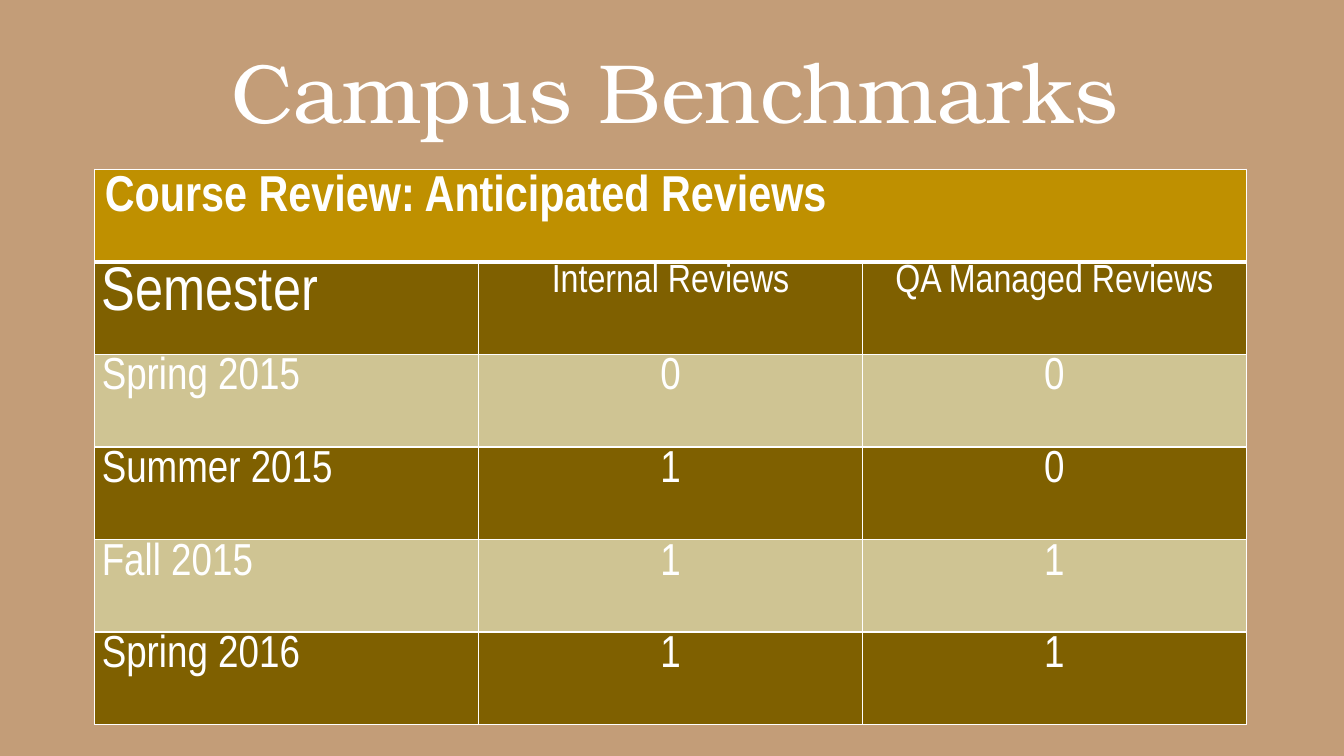
import lxml.etree
import pptx
import pptx.dml.color
import pptx.enum.text
import pptx.oxml.ns
import pptx.util

Inches = pptx.util.Inches
Pt = pptx.util.Pt
PP_ALIGN = pptx.enum.text.PP_ALIGN
MSO_ANCHOR = pptx.enum.text.MSO_ANCHOR

WHITE = "FFFFFF"
GOLD = "BF9000"
BROWN = "7F6000"
SAND = "CFC493"
TAN = "C39D78"

HEADING = "Course Review: Anticipated Reviews"
ROWS = [
    ("Semester", "Internal Reviews", "QA Managed Reviews"),
    ("Spring 2015", "0", "0"),
    ("Summer 2015", "1", "0"),
    ("Fall 2015", "1", "1"),
    ("Spring 2016", "1", "1"),
]


def color(value):
    return pptx.dml.color.RGBColor.from_string(value)


def format_text(p, font, size, bold=False, align=PP_ALIGN.LEFT, spacing=1.0):
    p.alignment = align
    p.line_spacing = spacing
    for r in p.runs:
        r.font.name = font
        r.font.size = Pt(size)
        r.font.bold = bold
        r.font.color.rgb = color(WHITE)


def set_borders(cell, top=1, bottom=1):
    tcPr = cell._tc.get_or_add_tcPr()
    qn = pptx.oxml.ns.qn
    for side, width in (("L", 1), ("R", 1), ("T", top), ("B", bottom)):
        ln = lxml.etree.SubElement(tcPr, qn("a:ln" + side), w=str(Pt(width)))
        fill = lxml.etree.SubElement(ln, qn("a:solidFill"))
        lxml.etree.SubElement(fill, qn("a:srgbClr"), val=WHITE)


def fill_cell(cell, value):
    cell.fill.solid()
    cell.fill.fore_color.rgb = color(value)


def add_title(slide, left, top, width, height):
    tf = slide.shapes.add_textbox(left, top, width, height).text_frame
    tf.word_wrap = True
    tf.vertical_anchor = MSO_ANCHOR.MIDDLE
    tf.text = "Campus Benchmarks"
    format_text(tf.paragraphs[0], "TeX Gyre Bonum", 60,
                align=PP_ALIGN.CENTER, spacing=0.9)


def add_review_table(slide, left, top, width, height):
    n_rows, n_cols = len(ROWS) + 1, len(ROWS[0])
    table = slide.shapes.add_table(n_rows, n_cols, left, top, width, height).table
    for column in table.columns:
        column.width = int(width / n_cols)
    for row in table.rows:
        row.height = int(height / n_rows)

    table.cell(0, 0).merge(table.cell(0, n_cols - 1))
    for cell in table.rows[0].cells:
        set_borders(cell, bottom=3)
        fill_cell(cell, GOLD)
    heading = table.cell(0, 0)
    heading.text = HEADING
    format_text(heading.text_frame.paragraphs[0], "Arial Narrow", 36, bold=True)

    for i, values in enumerate(ROWS, start=1):
        for j, value in enumerate(values):
            cell = table.cell(i, j)
            set_borders(cell, top=3 if i == 1 else 1)
            fill_cell(cell, BROWN if i % 2 else SAND)
            cell.margin_left = cell.margin_right = Inches(0.07)
            cell.margin_top = cell.margin_bottom = 0
            cell.text = value
            size = 32 if i > 1 else 28 if j else 44
            format_text(cell.text_frame.paragraphs[0], "Arial Narrow", size,
                        align=PP_ALIGN.CENTER if j else PP_ALIGN.LEFT,
                        spacing=1.07)


def main():
    prs = pptx.Presentation()
    prs.slide_width = Inches(13.33)
    prs.slide_height = Inches(7.5)
    slide = prs.slides.add_slide(prs.slide_layouts[6])
    slide.background.fill.solid()
    slide.background.fill.fore_color.rgb = color(TAN)
    add_title(slide, Inches(0.94), Inches(0.23), Inches(11.5), Inches(1.45))
    add_review_table(slide, Inches(0.94), Inches(1.68), Inches(11.42), Inches(5.51))
    prs.save("out.pptx")


if __name__ == "__main__":
    main()
